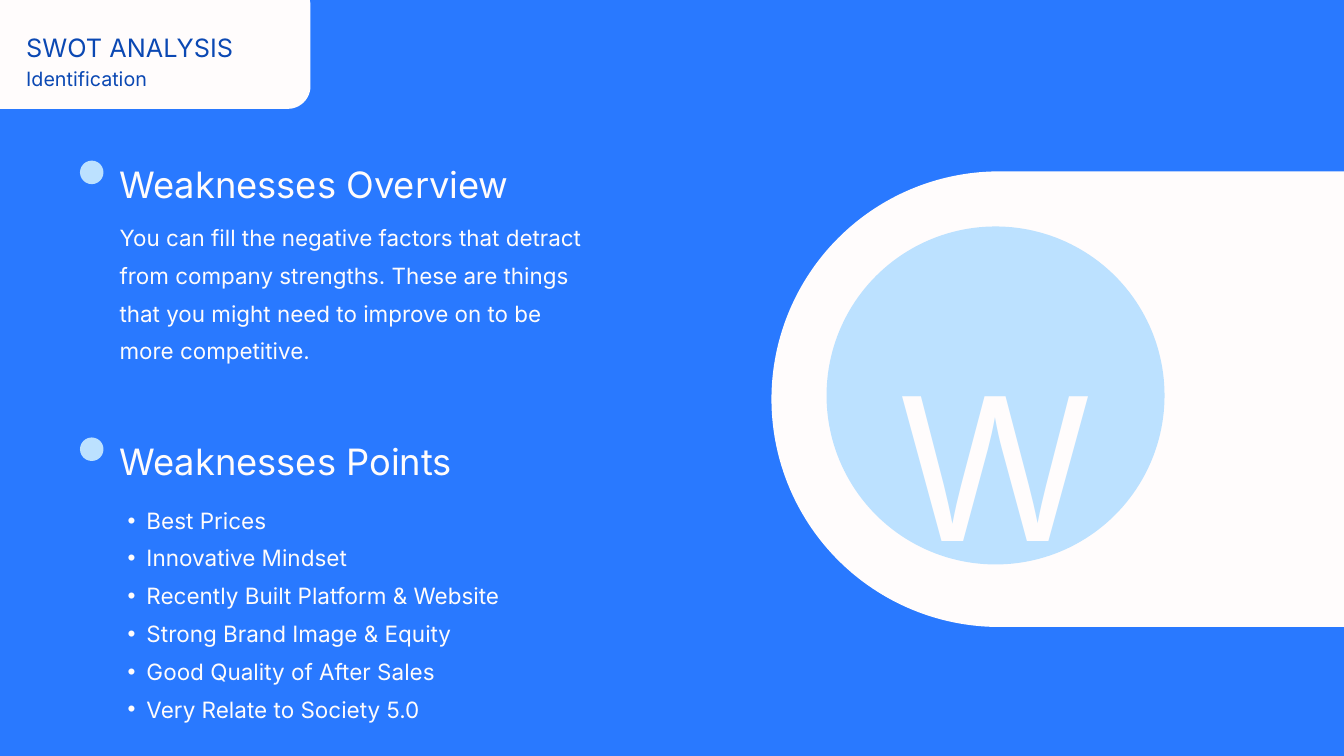
from dataclasses import dataclass

from lxml import etree
from pptx import Presentation
from pptx.dml.color import RGBColor
from pptx.enum.shapes import MSO_SHAPE
from pptx.enum.text import MSO_ANCHOR, MSO_AUTO_SIZE, PP_ALIGN
from pptx.oxml.ns import qn
from pptx.shapes.autoshape import Shape
from pptx.slide import Slide
from pptx.util import Inches, Pt

BLUE = RGBColor(0x29, 0x79, 0xFF)
NAVY = RGBColor(0x0B, 0x48, 0xB3)
SKY = RGBColor(0xBC, 0xE1, 0xFF)
WHITE = RGBColor(0xFF, 0xFC, 0xFC)
FONT = "Inter"

OVAL = MSO_SHAPE.OVAL
ROUND = MSO_SHAPE.ROUNDED_RECTANGLE
ROUND_END = MSO_SHAPE.ROUND_2_SAME_RECTANGLE
LEFT, CENTER = PP_ALIGN.LEFT, PP_ALIGN.CENTER
TOP = MSO_ANCHOR.TOP
NO_FIT = MSO_AUTO_SIZE.NONE


@dataclass
class Box:
    left: float
    top: float
    width: float
    height: float


@dataclass
class Section:
    head: str
    top: float
    width: float


SECTIONS = [
    Section("Weaknesses Overview", 2.16, 7.08),
    Section("Weaknesses Points", 6.28, 6.56),
]
OVERVIEW = [
    "You can fill the negative factors that detract",
    "from company strengths. These are things",
    "that you might need to improve on to be",
    "more competitive.",
]
POINTS = [
    "Best Prices",
    "Innovative Mindset",
    "Recently Built Platform & Website",
    "Strong Brand Image & Equity",
    "Good Quality of After Sales",
    "Very Relate to Society 5.0",
]


def place(shape: Shape, box: Box) -> None:
    shape.left, shape.top = Inches(box.left), Inches(box.top)
    shape.width, shape.height = Inches(box.width), Inches(box.height)


def add_form(slide: Slide, kind: MSO_SHAPE, box: Box, fill: RGBColor) -> Shape:
    form = slide.shapes.add_shape(kind, 0, 0, 0, 0)
    place(form, box)
    form.shadow.inherit = False
    form.fill.solid()
    form.fill.fore_color.rgb = fill
    form.line.fill.background()
    return form


def add_bullet(para) -> None:
    para.level = 1
    props = para._p.get_or_add_pPr()
    props.set("marL", str(Inches(0.57)))
    props.set("indent", str(Inches(-0.28)))
    etree.SubElement(props, qn("a:buFont")).set("typeface", "Arial")
    etree.SubElement(props, qn("a:buChar")).set("char", "•")


def write(slide: Slide, lines: list[str], box: Box, *, size: float,
          color: RGBColor = WHITE, align: PP_ALIGN = LEFT,
          bullet: bool = False, holder: Shape | None = None) -> None:
    """Write lines into the given placeholder, or into a new text box."""
    shape = holder or slide.shapes.add_textbox(0, 0, 0, 0)
    place(shape, box)
    frame = shape.text_frame
    frame.word_wrap = True
    frame.auto_size = NO_FIT
    frame.vertical_anchor = TOP
    frame.margin_left = frame.margin_right = 0
    frame.margin_top = frame.margin_bottom = 0
    frame.text = "\n".join(lines)
    for para in frame.paragraphs:
        para.alignment = align
        para.line_spacing = 1.4
        para.space_before = Pt(0)
        if bullet:
            add_bullet(para)
        font = para.runs[0].font
        font.name, font.size, font.color.rgb = FONT, Pt(size), color


def add_header(slide: Slide) -> None:
    card = add_form(slide, ROUND, Box(-0.56, -0.25, 5.18, 1.87), WHITE)
    card.adjustments[0] = 0.18
    slide.shapes.element.insert(2, card.element)  # behind the title
    write(slide, ["SWOT ANALYSIS"], Box(0.39, 0.3, 4.04, 0.5), size=27.1,
          color=NAVY, holder=slide.shapes.title)
    write(slide, ["Identification"], Box(0.39, 0.85, 2.84, 0.39), size=21.1,
          color=NAVY)


def add_badge(slide: Slide) -> None:
    panel = add_form(slide, ROUND_END, Box(13.16, 0.87, 6.78, 10.14), WHITE)
    panel.adjustments[0], panel.adjustments[1] = 0, 0.5
    panel.rotation = 90
    add_form(slide, OVAL, Box(12.3, 3.37, 5.03, 5.03), SKY)
    write(slide, ["W"], Box(13.09, 3.67, 3.45, 4), size=213.2, align=CENTER)


def add_section(slide: Slide, part: Section) -> None:
    add_form(slide, OVAL, Box(1.19, part.top + 0.23, 0.35, 0.35), SKY)
    write(slide, [part.head], Box(1.78, part.top, part.width, 0.73), size=38.9)


def main() -> None:
    deck = Presentation()
    deck.slide_width, deck.slide_height = Inches(20), Inches(11.25)
    slide = deck.slides.add_slide(deck.slide_layouts[1])
    slide.background.fill.solid()
    slide.background.fill.fore_color.rgb = BLUE

    add_header(slide)
    add_badge(slide)
    for part in SECTIONS:
        add_section(slide, part)
    write(slide, OVERVIEW, Box(1.78, 3.18, 9.39, 1.82), size=24)
    write(slide, POINTS, Box(1.61, 7.38, 8.62, 2.75), size=24.1,
          bullet=True, holder=slide.placeholders[1])
    deck.save("out.pptx")


if __name__ == "__main__":
    main()
